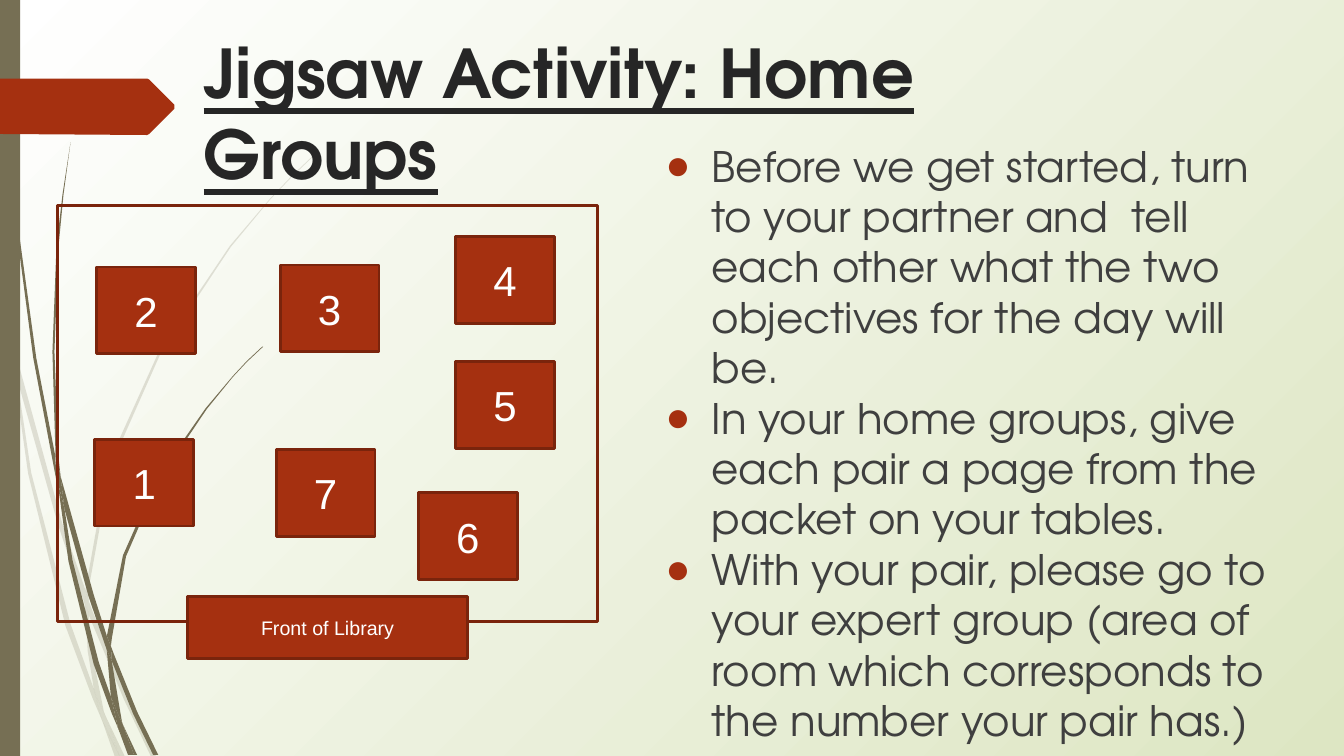
from pptx import Presentation
from pptx.dml.color import RGBColor
from pptx.enum.shapes import MSO_SHAPE as Shape
from pptx.enum.text import MSO_ANCHOR as Anchor, MSO_AUTO_SIZE as AutoSize, PP_ALIGN as Align
from pptx.oxml import parse_xml
from pptx.oxml.ns import nsdecls, qn
from pptx.util import Pt

# Content
TITLE = "Jigsaw Activity: Home Groups"
STEPS = [
    "Before we get started, turn to your partner and  tell each other what the two "
    "objectives for the day will be.",
    "In your home groups, give each pair a page from the packet on your tables.",
    "With your pair, please go to your expert group (area of room which corresponds "
    "to the number your pair has.)",
]
FRONT_LABEL = "Front of Library"
TABLES = {"1": (94, 436), "2": (96, 265), "3": (278, 263), "4": (452, 235),
          "5": (452, 359), "6": (415, 489), "7": (274, 446)}

# Colours and fonts
OLIVE = RGBColor(0x76, 0x6F, 0x54)
RUST = RGBColor(0xA5, 0x30, 0x10)
DARK_RUST = RGBColor(0x7A, 0x24, 0x0C)
INK = RGBColor(0x26, 0x26, 0x26)
GREY = RGBColor(0x3F, 0x3F, 0x3F)
WHITE = RGBColor(0xFF, 0xFF, 0xFF)
PALE_GREEN = RGBColor(0xDD, 0xE6, 0xC3)
HEADING_FONT, LABEL_FONT = "TeX Gyre Adventor", "Arial"

# Layout: 100 px to the inch; boxes are left, top, width, height
PX = 9144
PAGE_SIZE = (1333, 750)
SIDE_BAR = (0, 0, 20, 750)
TITLE_BOX = (192, 21, 975, 78)
STEPS_BOX = (646, 129, 629, 584)
ROOM = (57, 204, 536, 413)
FRONT = (186, 592, 278, 61)
TABLE_SIZE = (98, 86)
INSET, BULLET_INDENT, BULLET_HANG = 10, 50, 46
ARROW_TAG = [(0, 78), (146, 78), (148, 79), (173, 104), (173, 108),
             (148, 133), (146, 134), (0, 133)]

# Grass blades, as outlines
PALE_BLADES = [
    [(11, 350), (9, 322), (0, 282), (0, 299), (10, 344)],
    [(58, 522), (84, 599), (85, 586), (62, 520), (14, 345), (17, 376)],
    [(92, 607), (88, 596), (88, 610), (123, 694), (150, 751), (155, 751), (127, 692)],
    [(119, 751), (124, 751), (105, 711)],
    [(93, 683), (70, 619), (31, 469), (17, 376), (11, 350), (28, 470), (65, 621),
     (92, 693), (101, 714), (99, 707)],
    [(84, 599), (87, 646), (93, 683), (96, 692), (105, 711), (103, 706), (91, 646),
     (88, 610), (88, 608)],
    [(88, 584), (110, 462), (160, 349), (229, 245), (268, 198), (290, 175), (312, 154),
     (312, 153), (289, 175), (268, 197), (228, 244), (158, 348), (107, 461), (85, 584),
     (85, 586), (88, 596)],
    [(101, 714), (114, 751), (119, 751)],
    [(88, 608), (88, 610), (88, 596), (85, 586), (84, 599)],
    [(96, 692), (93, 683), (99, 707), (101, 714), (119, 751), (105, 711)],
]
DARK_BLADES = [
    [(7, 110), (17, 233), (33, 355), (56, 477), (57, 481), (55, 457), (55, 453),
     (36, 355), (19, 232), (8, 109), (5, 48), (4, 0), (3, 0), (4, 48)],
    [(88, 592), (106, 645), (106, 633), (106, 631), (93, 590), (60, 472), (64, 505)],
    [(113, 649), (110, 641), (111, 656), (132, 708), (152, 749), (157, 749), (136, 706)],
    [(110, 691), (98, 657), (72, 556), (64, 505), (57, 477), (68, 557), (93, 659),
     (111, 708), (117, 722), (116, 717)],
    [(60, 472), (58, 453), (54, 349), (58, 245), (63, 193), (70, 141), (62, 193),
     (56, 245), (52, 349), (55, 449)],
    [(133, 749), (136, 749), (122, 719)],
    [(57, 477), (64, 505), (60, 472), (55, 449), (55, 453)],
    [(111, 633), (125, 552), (158, 476), (205, 406), (231, 374), (245, 359), (261, 344),
     (260, 344), (245, 358), (231, 373), (204, 405), (156, 474), (122, 551), (106, 631),
     (110, 641)],
    [(117, 722), (127, 749), (131, 749)],
    [(106, 645), (110, 691), (116, 706), (122, 719), (121, 716), (111, 656), (109, 651)],
    [(106, 645), (109, 651), (111, 656), (110, 641), (106, 631), (106, 633)],
    [(116, 706), (110, 691), (116, 717), (117, 722), (130, 749), (133, 749), (122, 719)],
]


def emu(box):
    return [length * PX for length in box]


def paint(shape, fill=None, line=None):
    shape.shadow.inherit = False
    if fill is None:
        shape.fill.background()
    else:
        shape.fill.solid()
        shape.fill.fore_color.rgb = fill
    if line is None:
        shape.line.fill.background()
    else:
        shape.line.color.rgb = line
        shape.line.width = Pt(2)
    return shape


def outline(shapes, points, fill):
    start, *others = [emu(point) for point in points]
    builder = shapes.build_freeform(*start)
    builder.add_line_segments(others, close=True)
    return paint(builder.convert_to_shape(), fill)


def rectangle(box, fill=None, line=None):
    return paint(slide.shapes.add_shape(Shape.RECTANGLE, *emu(box)), fill, line)


def write(para, text, color, **formats):
    span = para.add_run()
    span.text = text
    span.font.color.rgb = color
    for name, value in formats.items():
        setattr(span.font, name, value)


def label_box(box, text, size):
    shape = rectangle(box, RUST, DARK_RUST)
    shape.text_frame.vertical_anchor = Anchor.MIDDLE
    para = shape.text_frame.paragraphs[0]
    para.alignment = Align.CENTER
    write(para, text, WHITE, size=Pt(size), name=LABEL_FONT)


def set_frame(frame):
    settings = {"word_wrap": True, "auto_size": AutoSize.NONE, "vertical_anchor": Anchor.TOP}
    for side in ("left", "top", "right", "bottom"):
        settings["margin_" + side] = INSET * PX
    for name, value in settings.items():
        setattr(frame, name, value)


def add_bullet(para):
    props = para._p.get_or_add_pPr()
    props.set("marL", str(BULLET_INDENT * PX))
    props.set("indent", str(-BULLET_HANG * PX))
    for tag in (f'<a:buClr {nsdecls("a")}><a:srgbClr val="{RUST}"/></a:buClr>',
                f'<a:buSzPct {nsdecls("a")} val="100000"/>',
                f'<a:buFont {nsdecls("a")} typeface="{LABEL_FONT}"/>',
                f'<a:buChar {nsdecls("a")} char="●"/>'):
        props.append(parse_xml(tag))


deck = Presentation()
deck.slide_width, deck.slide_height = emu(PAGE_SIZE)
slide = deck.slides.add_slide(deck.slide_layouts[5])

# Background gradient
slide.background.fill.solid()
background = slide.element.find(".//" + qn("p:bgPr"))
background.replace(background[0], parse_xml(
    f'<a:gradFill {nsdecls("a")} rotWithShape="1"><a:gsLst>'
    f'<a:gs pos="0"><a:srgbClr val="{WHITE}"/></a:gs>'
    f'<a:gs pos="100000"><a:srgbClr val="{PALE_GREEN}"/></a:gs></a:gsLst>'
    '<a:path path="circle"><a:fillToRect r="100000" b="100000"/></a:path></a:gradFill>'))

# Grass blades, side bar and arrow tag
for blades, opacity in ((PALE_BLADES, 20), (DARK_BLADES, 100)):
    tuft = slide.shapes.add_group_shape()
    for points in blades:
        blade = outline(tuft.shapes, points, OLIVE)
        if opacity < 100:
            color = blade.element.spPr.find(qn("a:solidFill"))[0]
            color.append(parse_xml(f'<a:alpha {nsdecls("a")} val="{opacity * 1000}"/>'))
rectangle(SIDE_BAR, OLIVE)
outline(slide.shapes, ARROW_TAG, RUST)

# Title, brought in front of the decoration
title = slide.shapes.title
title.element.getparent().append(title.element)
title.left, title.top, title.width, title.height = emu(TITLE_BOX)
set_frame(title.text_frame)
heading = title.text_frame.paragraphs[0]
heading.alignment = Align.LEFT
write(heading, TITLE, INK, size=Pt(48), name=HEADING_FONT, bold=True, underline=True)

# Steps
steps_frame = slide.shapes.add_textbox(*emu(STEPS_BOX)).text_frame
set_frame(steps_frame)
for i, step in enumerate(STEPS):
    para = steps_frame.add_paragraph() if i else steps_frame.paragraphs[0]
    add_bullet(para)
    write(para, step, GREY, size=Pt(30), name=HEADING_FONT)

# Room plan
rectangle(ROOM, line=DARK_RUST)
label_box(FRONT, FRONT_LABEL, 14)
for number, corner in TABLES.items():
    label_box(corner + TABLE_SIZE, number, 30)

deck.save("out.pptx")
